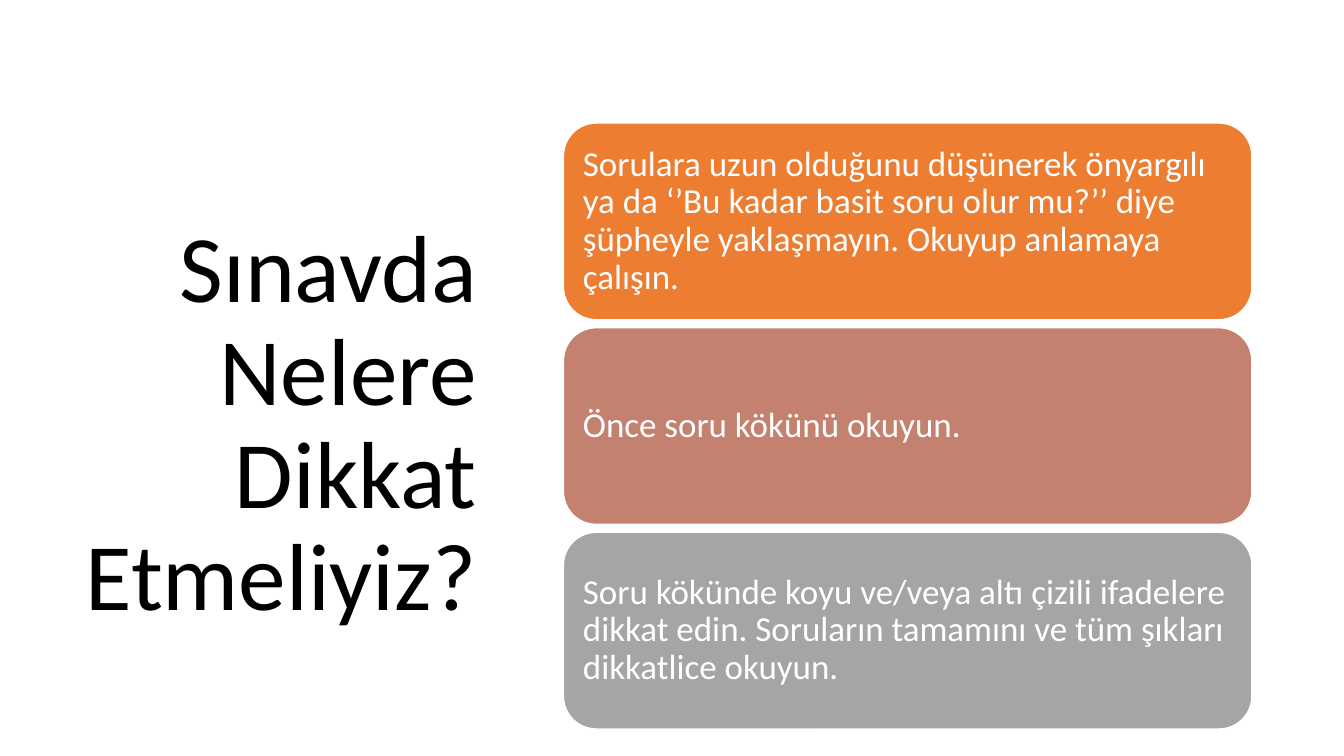
from pptx import Presentation
from pptx import util as u
from pptx.dml.color import RGBColor
from pptx.enum import shapes, text

BLACK = RGBColor(0x00, 0x00, 0x00)
WHITE = RGBColor(0xFF, 0xFF, 0xFF)
ORANGE = RGBColor(0xED, 0x7D, 0x31)
ROSE = RGBColor(0xC4, 0x81, 0x70)
GRAY = RGBColor(0xA5, 0xA5, 0xA5)

TITLE = "Sınavda Nelere Dikkat Etmeliyiz?"
TIPS = [
    ("Sorulara uzun olduğunu düşünerek önyargılı ya da ‘’Bu kadar basit soru "
     "olur mu?’’ diye şüpheyle yaklaşmayın. Okuyup anlamaya çalışın.", ORANGE),
    ("Önce soru kökünü okuyun.", ROSE),
    ("Soru kökünde koyu ve/veya altı çizili ifadelere dikkat edin. Soruların "
     "tamamını ve tüm şıkları dikkatlice okuyun.", GRAY),
]


def write(box, words, size, color, align):
    """Fill a box with one vertically centred paragraph."""
    frame = box.text_frame
    frame.word_wrap = True
    frame.vertical_anchor = text.MSO_ANCHOR.MIDDLE
    frame.margin_left = frame.margin_right = u.Cm(0.25)
    frame.margin_top = frame.margin_bottom = u.Cm(0.25)
    para = frame.paragraphs[0]
    para.text = words
    para.alignment = align
    para.line_spacing = 0.9
    font = para.runs[0].font
    font.name, font.size, font.color.rgb = "Calibri", u.Pt(size), color


def add_title(page, left, top, width, height):
    """Place the right-aligned slide title."""
    box = page.shapes.add_textbox(left, top, width, height)
    write(box, TITLE, 68, BLACK, text.PP_ALIGN.RIGHT)


def add_tips(page, left, top, width, height):
    """Stack the tip cards evenly within the given box."""
    gap = u.Cm(0.2)
    card_height = (height - gap * (len(TIPS) - 1)) // len(TIPS)
    for index, (words, color) in enumerate(TIPS):
        card = page.shapes.add_shape(
            shapes.MSO_SHAPE.ROUNDED_RECTANGLE,
            left, top + index * (card_height + gap), width, card_height)
        card.shadow.inherit = False
        card.fill.solid()
        card.fill.fore_color.rgb = color
        card.line.color.rgb = WHITE
        card.line.width = u.Pt(1)
        write(card, words, 25, WHITE, text.PP_ALIGN.LEFT)


def main():
    """Build and save the deck."""
    deck = Presentation()
    deck.slide_width, deck.slide_height = u.Cm(33.87), u.Cm(19.05)
    page = deck.slides.add_slide(deck.slide_layouts[6])
    add_title(page, u.Cm(1.32), u.Cm(2.97), u.Cm(10.95), u.Cm(15.52))
    add_tips(page, u.Cm(14.2), u.Cm(3.1), u.Cm(17.35), u.Cm(15.27))
    deck.save("out.pptx")


if __name__ == "__main__":
    main()
